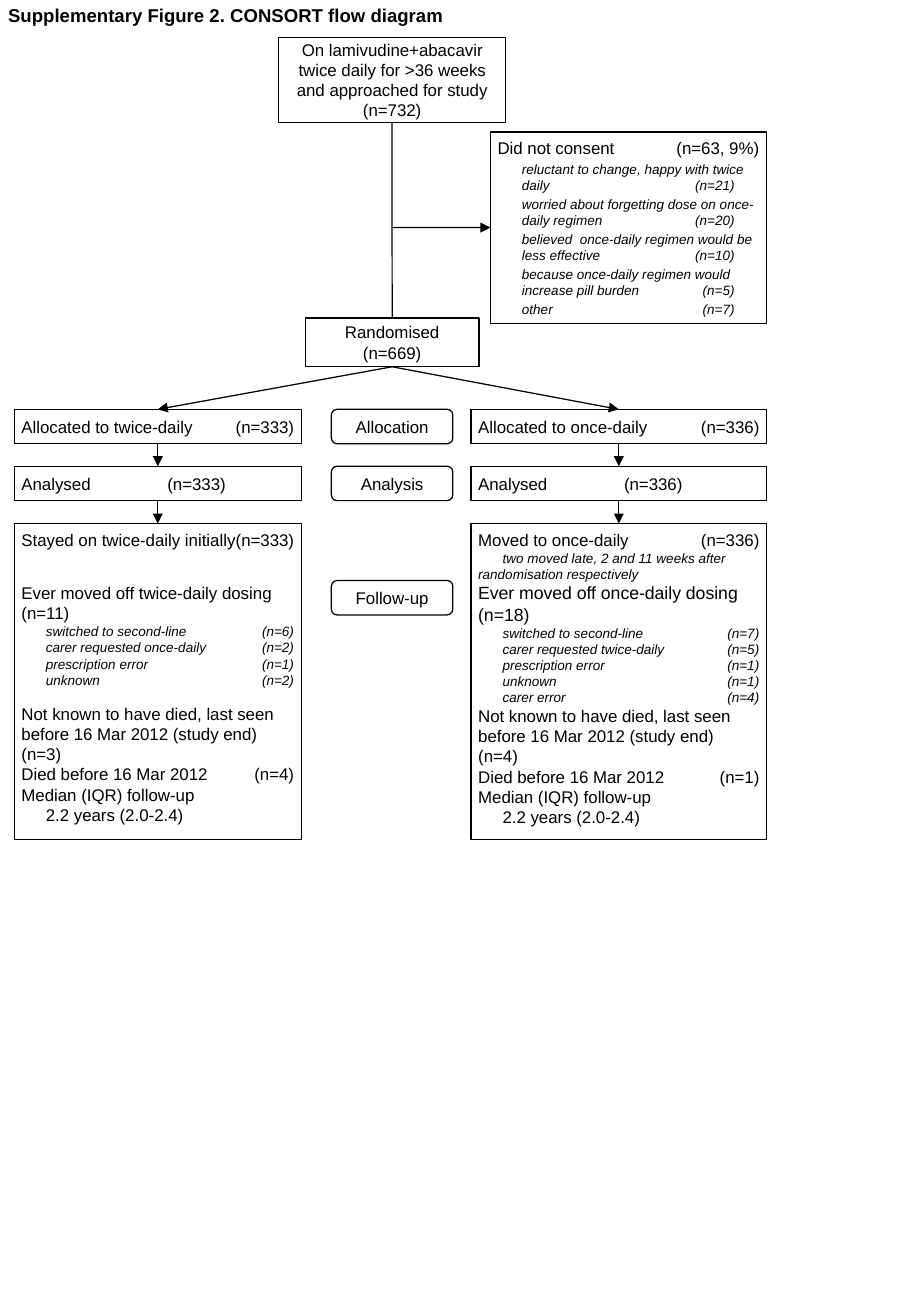
from lxml.etree import SubElement
from pptx import Presentation
from pptx.dml.color import RGBColor
from pptx.enum.shapes import MSO_CONNECTOR as Link, MSO_SHAPE as Outline
from pptx.enum.text import MSO_ANCHOR as Anchor, MSO_AUTO_SIZE as AutoSize, PP_ALIGN as Align
from pptx.oxml.ns import qn
from pptx.util import Cm, Pt

rgb = RGBColor.from_string
BLACK, WHITE = "000000", "FFFFFF"
MAIN = {"size": Pt(10), "name": "Arial", "italic": False}
LARGER = {**MAIN, "size": Pt(10.5)}
DETAIL = {**MAIN, "size": Pt(8), "italic": True}
TITLE = {**MAIN, "size": Pt(11), "bold": True}

CENTRE_FORMAT = {"align": Align.CENTER, "inset": 0.25, "anchor": Anchor.MIDDLE, "tabs": []}
ROW_FORMAT = {"align": Align.LEFT, "inset": 0.15, "anchor": Anchor.MIDDLE, "tabs": [(6.35, "r")]}
ANALYSED_FORMAT = {**ROW_FORMAT, "tabs": [(3.05, "l")]}
FOLLOW_UP_FORMAT = {**ROW_FORMAT, "anchor": Anchor.TOP, "tabs": [(0.51, "l"), (6.35, "r")]}
CONSENT_FORMAT = {**ROW_FORMAT, "tabs": [(6.1, "r")]}

AXIS = 8.2
ALLOCATION_TOP, ANALYSIS_TOP, FOLLOW_UP_TOP = 8.56, 9.75, 10.95
ROW_HEIGHT = 0.72

deck = Presentation()
deck.slide_width, deck.slide_height = Cm(19.05), Cm(27.52)
slide = deck.slides.add_slide(deck.slide_layouts[5])


def add_box(centre, top, width, height, lines, layout, outline=Outline.FLOWCHART_PROCESS):
    box = slide.shapes.add_shape(outline, Cm(centre - width / 2), Cm(top), Cm(width), Cm(height))
    box.shadow.inherit = False
    box.fill.solid()
    box.fill.fore_color.rgb = rgb(WHITE)
    box.line.color.rgb = rgb(BLACK)
    box.line.width = Pt(0.75)
    frame = box.text_frame
    frame.word_wrap = True
    frame.vertical_anchor = layout["anchor"]
    frame.margin_left = frame.margin_right = Cm(layout["inset"])
    for index, (text, style, gap, indent) in enumerate(lines):
        paragraph = frame.add_paragraph() if index else frame.paragraphs[0]
        paragraph.text = text
        paragraph.alignment = layout["align"]
        paragraph.space_before = Pt(gap)
        properties = paragraph._p.get_or_add_pPr()
        if indent:
            properties.set("marL", str(Cm(indent)))
        if layout["tabs"]:
            tab_list = SubElement(properties, qn("a:tabLst"))
            for position, side in layout["tabs"]:
                SubElement(tab_list, qn("a:tab"), pos=str(Cm(position)), algn=side)
        for line_break in paragraph._p.findall(qn("a:br")):
            SubElement(line_break, qn("a:rPr"), sz=str(int(style["size"].pt * 100)))
        for run in paragraph.runs:
            run.font.color.rgb = rgb(BLACK)
            for attribute, value in style.items():
                setattr(run.font, attribute, value)
    return box


def add_link(start, end, arrow=True, end_site=0):
    link = slide.shapes.add_connector(Link.STRAIGHT, Cm(AXIS), Cm(4.76), Cm(10.26), Cm(4.76))
    if start:
        link.begin_connect(start, 2)
    link.end_connect(end, end_site)
    link.line.color.rgb = rgb(BLACK)
    link.line.width = Pt(0.75)
    if arrow:
        SubElement(link.line._get_or_add_ln(), qn("a:tailEnd"), type="triangle")
    SubElement(link._element.spPr, qn("a:effectLst"))


title = slide.shapes.title
title.left, title.top, title.width, title.height = Cm(0), Cm(0), Cm(10.3), Cm(0.7)
title.text = "Supplementary Figure 2. CONSORT flow diagram"
title_format = {"margin_left": Cm(0.17), "margin_top": Cm(0.09), "margin_bottom": Cm(0),
                "vertical_anchor": Anchor.TOP, "auto_size": AutoSize.NONE, "word_wrap": True}
for attribute, value in title_format.items():
    setattr(title.text_frame, attribute, value)
heading = title.text_frame.paragraphs[0]
heading.alignment = Align.LEFT
heading.runs[0].font.color.rgb = rgb(BLACK)
for attribute, value in TITLE.items():
    setattr(heading.runs[0].font, attribute, value)

approached = add_box(AXIS, 0.78, 4.75, 1.78, [
    ("On lamivudine+abacavir twice daily for >36 weeks and approached for study", MAIN, 0, 0),
    ("(n=732)", MAIN, 0, 0)], CENTRE_FORMAT)
randomised = add_box(AXIS, 6.65, 3.63, 1.02, [
    ("Randomised", MAIN, 0, 0), ("(n=669)", MAIN, 0, 0)], CENTRE_FORMAT)

reasons = ["reluctant to change, happy with twice daily \t(n=21)",
           "worried about forgetting dose on once-daily regimen\t(n=20)",
           "believed  once-daily regimen would be less effective\t(n=10)",
           "because once-daily regimen would increase pill burden\t(n=5)",
           "other\t(n=7)"]
no_consent = add_box(13.14, 2.76, 5.77, 4,
                     [("Did not consent \t(n=63, 9%)", MAIN, 0, 0)]
                     + [(reason, DETAIL, 1.6, 0.51) for reason in reasons], CONSENT_FORMAT)
add_link(approached, randomised, arrow=False)
add_link(None, no_consent, end_site=1)

for stage, top in [("Allocation", ALLOCATION_TOP), ("Analysis", ANALYSIS_TOP), ("Follow-up", 12.14)]:
    add_box(AXIS, top, 2.54, ROW_HEIGHT, [(stage, MAIN, 0, 0)], CENTRE_FORMAT,
            Outline.FLOWCHART_ALTERNATE_PROCESS)

twice_daily = {
    "centre": 3.3, "width": 6, "regimen": "twice-daily", "allocated": 333,
    "opening": [("Stayed on twice-daily initially\t(n=333)", MAIN, 0, 0)],
    "moved": 11, "moved_style": MAIN, "moved_gap": 19.5,
    "causes": [("switched to second-line", 6), ("carer requested once-daily", 2),
               ("prescription error", 1), ("unknown", 2)],
    "unseen": 3, "unseen_gap": 9, "died": 4}
once_daily = {
    "centre": 12.94, "width": 6.18, "regimen": "once-daily", "allocated": 336,
    "opening": [("Moved to once-daily\t(n=336)", MAIN, 0, 0),
                ("\ttwo moved late, 2 and 11 weeks after\vrandomisation respectively", DETAIL, 0, 0)],
    "moved": 18, "moved_style": LARGER, "moved_gap": 0,
    "causes": [("switched to second-line", 7), ("carer requested twice-daily", 5),
               ("prescription error", 1), ("unknown", 1), ("carer error", 4)],
    "unseen": 4, "unseen_gap": 0, "died": 1}

for arm in (twice_daily, once_daily):
    centre, width, count = arm["centre"], arm["width"], arm["allocated"]
    allocated = add_box(centre, ALLOCATION_TOP, width, ROW_HEIGHT,
                        [(f"Allocated to {arm['regimen']}\t(n={count})", MAIN, 0, 0)], ROW_FORMAT)
    analysed = add_box(centre, ANALYSIS_TOP, width, ROW_HEIGHT,
                       [(f"Analysed\t(n={count})", MAIN, 0, 0)], ANALYSED_FORMAT)
    outcomes = [
        *arm["opening"],
        (f"Ever moved off {arm['regimen']} dosing\v(n={arm['moved']})",
         arm["moved_style"], arm["moved_gap"], 0),
        *[(f"\t{cause}\t(n={number})", DETAIL, 0, 0) for cause, number in arm["causes"]],
        (f"Not known to have died, last seen before 16 Mar 2012 (study end)\v(n={arm['unseen']})",
         MAIN, arm["unseen_gap"], 0),
        (f"Died before 16 Mar 2012\t(n={arm['died']})", MAIN, 0, 0),
        ("Median (IQR) follow-up", MAIN, 0, 0),
        ("\t2.2 years (2.0-2.4)", MAIN, 0, 0)]
    follow_up = add_box(centre, FOLLOW_UP_TOP, width, 6.6, outcomes, FOLLOW_UP_FORMAT)
    for start, end in [(randomised, allocated), (allocated, analysed), (analysed, follow_up)]:
        add_link(start, end)

deck.save("out.pptx")
